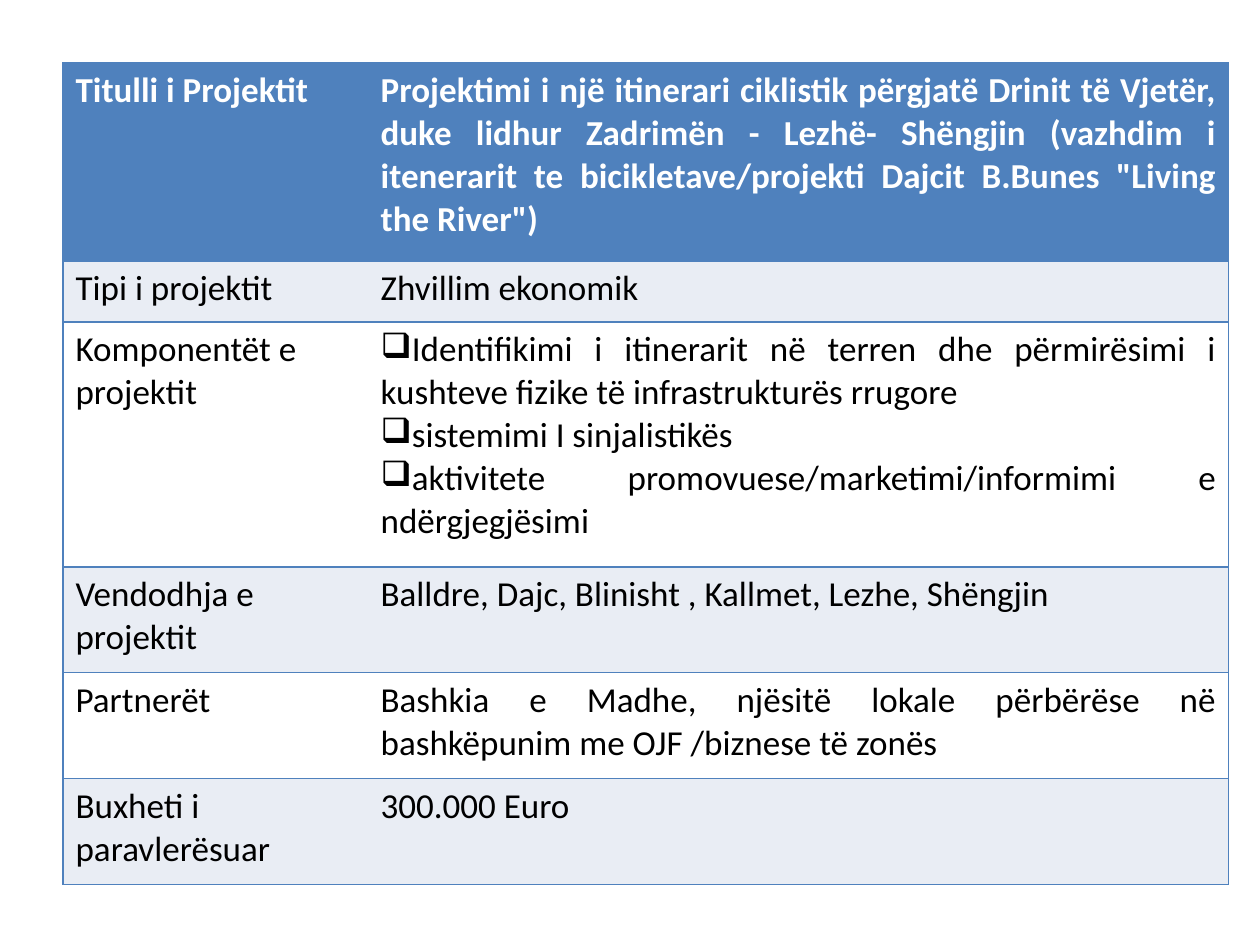
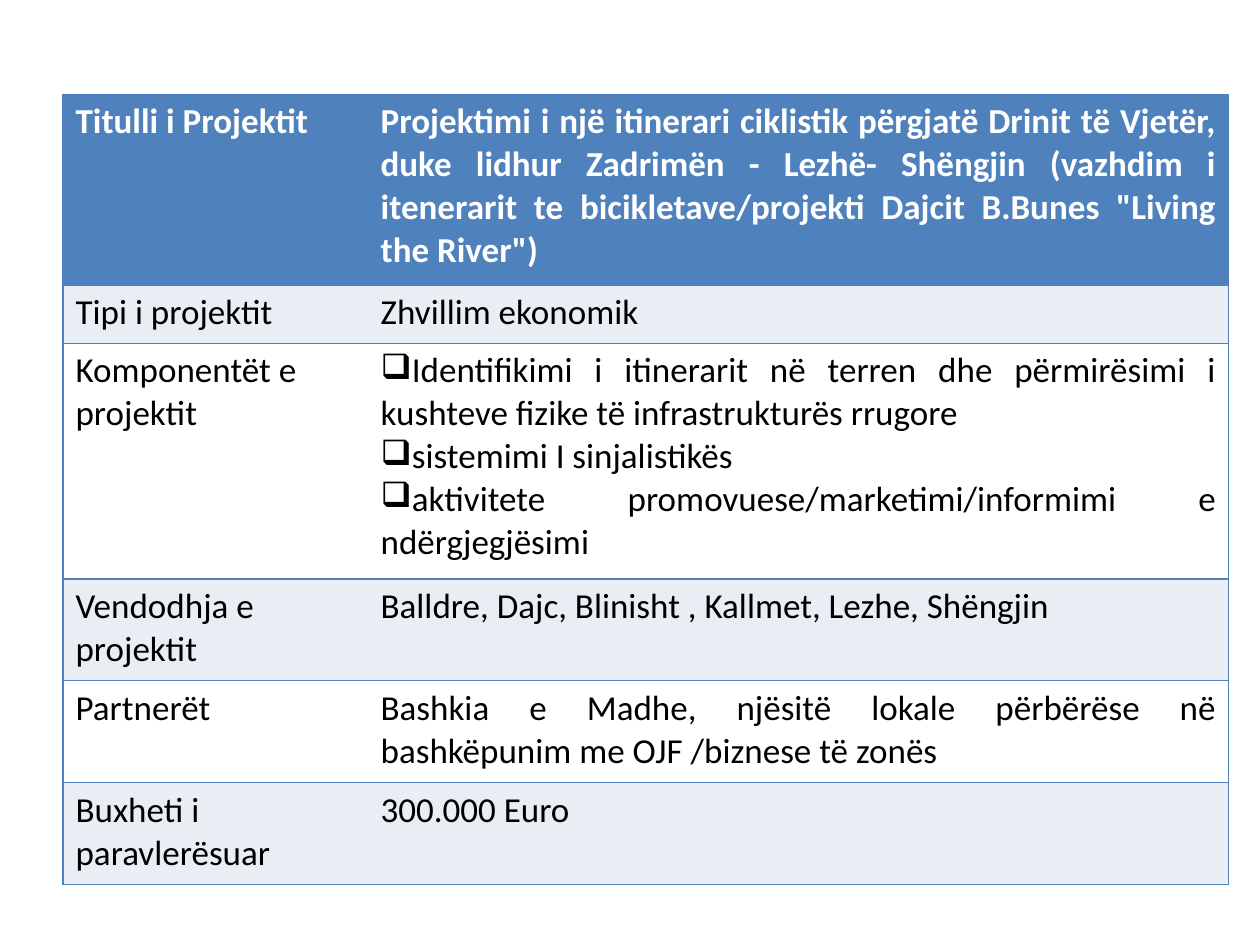
from lxml.etree import SubElement
from pptx import Presentation
from pptx.dml.color import RGBColor
from pptx.enum.text import PP_ALIGN
from pptx.oxml.ns import qn
from pptx.util import Cm, Pt

ROWS = [
    ("Titulli i Projektit", [
        "Projektimi i një itinerari ciklistik përgjatë Drinit të Vjetër, "
        "duke lidhur Zadrimën - Lezhë- Shëngjin (vazhdim i itenerarit te "
        'bicikletave/projekti Dajcit B.Bunes "Living the River")']),
    ("Tipi i projektit", ["Zhvillim ekonomik"]),
    ("Komponentët e projektit", [
        "Identifikimi i itinerarit në terren dhe përmirësimi i kushteve "
        "fizike të infrastrukturës rrugore",
        "sistemimi I sinjalistikës",
        "aktivitete promovuese/marketimi/informimi e ndërgjegjësimi"]),
    ("Vendodhja e projektit",
     ["Balldre, Dajc, Blinisht , Kallmet, Lezhe, Shëngjin"]),
    ("Partnerët", ["Bashkia e Madhe, njësitë lokale përbërëse në "
                   "bashkëpunim me OJF /biznese të zonës"]),
    ("Buxheti i paravlerësuar", ["300.000 Euro"]),
]
TOPS = [1.27, 1.9]
BOTTOM = 17.83
LEFT = 1.27
WIDTHS = [6.15, 17.35]
SHARES = [3.99, 1.22, 4.93, 2.13, 2.13, 2.13]

BLUE = RGBColor(0x4F, 0x81, 0xBD)
PALE = RGBColor(0xE9, 0xED, 0xF4)
WHITE = RGBColor(0xFF, 0xFF, 0xFF)
BLACK = RGBColor(0, 0, 0)
FONT = {"name": "Calibri", "size": Pt(20)}
NO_GRID = "{2D5ABB26-0587-4C30-8999-92F81FD0307C}"
SIDES = ["LTB", "RTB"]


def edge(cell, sides):
    props = cell._tc.get_or_add_tcPr()
    for side in sides:
        line = SubElement(props, qn(f"a:ln{side}"), w=str(Pt(1)))
        fill = SubElement(line, qn("a:solidFill"))
        SubElement(fill, qn("a:srgbClr"), val=str(BLUE))


def write(cell, texts, align, head):
    frame = cell.text_frame
    frame.text = "\n".join(texts)
    for para in frame.paragraphs:
        para.alignment = align
        if len(texts) > 1:
            SubElement(para._p.get_or_add_pPr(), qn("a:buChar"), char="❑")
        font = para.runs[0].font
        for key, value in {**FONT, "bold": head}.items():
            setattr(font, key, value)
        font.color.rgb = WHITE if head else BLACK


def build(slide, top):
    height = BOTTOM - top
    table = slide.shapes.add_table(
        len(ROWS), len(WIDTHS), Cm(LEFT), Cm(top),
        Cm(sum(WIDTHS)), Cm(height)).table
    table.first_row = table.horz_banding = False
    table._tbl.tblPr.find(qn("a:tableStyleId")).text = NO_GRID
    for col, width in zip(table.columns, WIDTHS):
        col.width = Cm(width)
    for i, (label, texts) in enumerate(ROWS):
        table.rows[i].height = Cm(height * SHARES[i] / sum(SHARES))
        head = i == 0
        tint = BLUE if head else PALE if i % 2 else WHITE
        for j, part in enumerate([[label], texts]):
            cell = table.cell(i, j)
            edge(cell, SIDES[j])
            cell.fill.solid()
            cell.fill.fore_color.rgb = tint
            align = PP_ALIGN.JUSTIFY if head or j else PP_ALIGN.LEFT
            write(cell, part, align, head)


def main():
    deck = Presentation()
    deck.slide_width, deck.slide_height = Cm(25.4), Cm(19.05)
    for top in TOPS:
        build(deck.slides.add_slide(deck.slide_layouts[6]), top)
    deck.save("out.pptx")


if __name__ == "__main__":
    main()
